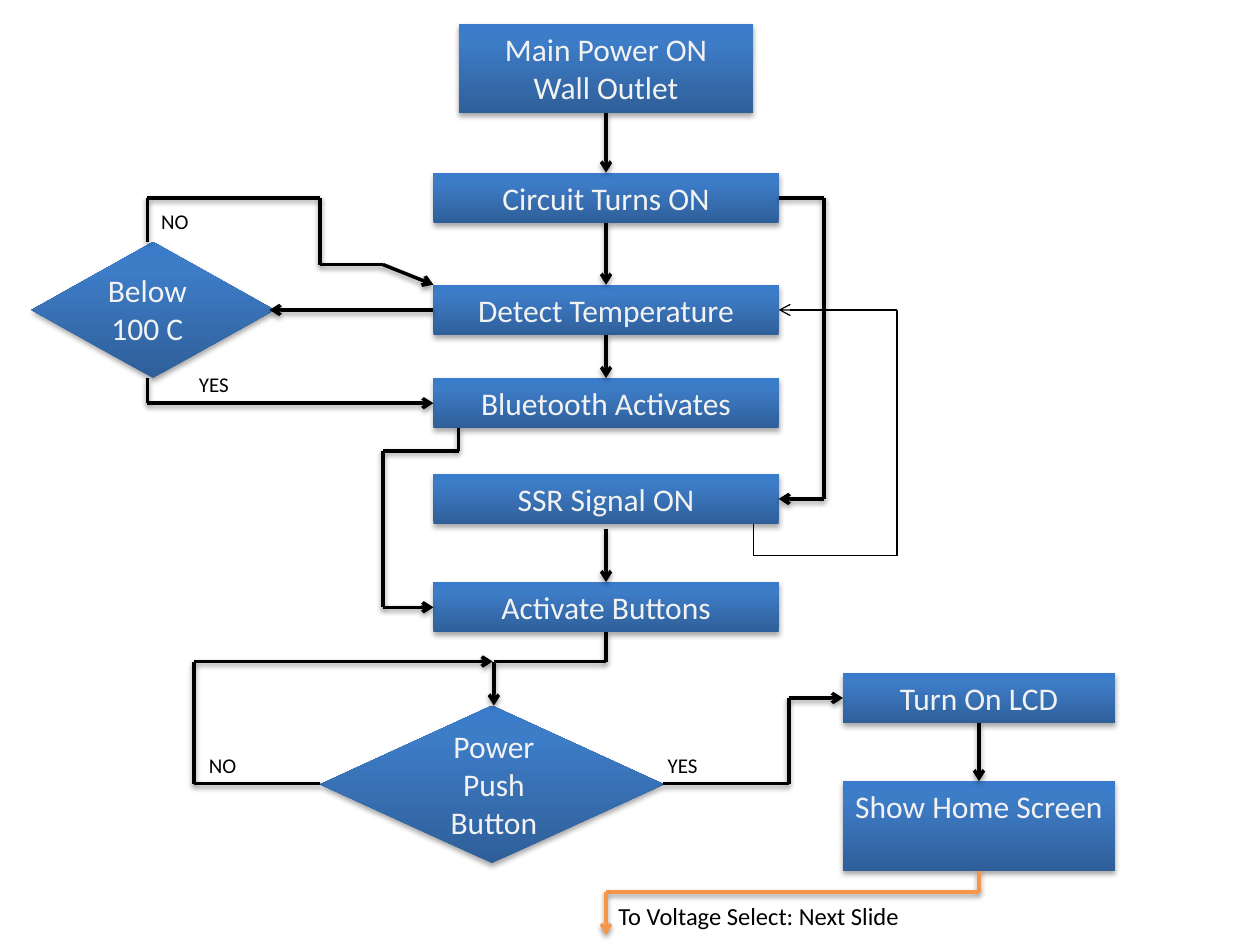
from copy import deepcopy
from itertools import pairwise

from lxml.etree import SubElement
from pptx import Presentation
from pptx.dml.color import RGBColor
from pptx.enum.shapes import MSO_CONNECTOR as Link, MSO_SHAPE as Form
from pptx.enum.text import MSO_ANCHOR as Anchor, PP_ALIGN as Align
from pptx.oxml.ns import qn
from pptx.util import Inches, Pt

BLACK = RGBColor(0, 0, 0)
PALE = RGBColor(0xF2, 0xF2, 0xF2)
ORANGE = RGBColor(0xF7, 0x96, 0x46)
BLUES = [
    (0, RGBColor(0x2F, 0x5F, 0x99)),
    (0.8, RGBColor(0x3D, 0x7C, 0xC7)),
    (1, RGBColor(0x3A, 0x7C, 0xCB)),
]
TOP, LEFT, BOTTOM, RIGHT = range(4)
SIDES = {TOP: (0.5, 0), LEFT: (0, 0.5), BOTTOM: (0.5, 1), RIGHT: (1, 0.5)}
AXIS = 4.81


def apply(target, values):
    for name, value in values.items():
        setattr(target, name, value)


class FlowPage:
    font = "Calibri"
    frame_format = {"word_wrap": True, "vertical_anchor": Anchor.TOP}
    box_format = {"margin_left": Inches(0.05), "margin_right": Inches(0.05)}

    def __init__(self, deck):
        self.page = deck.slides.add_slide(deck.slide_layouts[6])

    def effects(self, item, opacity=0, distance=0):
        effects = SubElement(item._element.spPr, qn("a:effectLst"))
        if opacity:
            shadow = SubElement(
                effects, qn("a:outerShdw"), blurRad=str(Pt(3.1)),
                dist=str(Pt(distance)), dir="5400000", rotWithShape="0")
            color = SubElement(shadow, qn("a:srgbClr"), val=str(BLACK))
            SubElement(color, qn("a:alpha"), val=str(opacity * 1000))

    def set_text(self, shape, lines, size, color, align):
        frame = shape.text_frame
        apply(frame, self.frame_format)
        frame.text = "\n".join(lines)
        for para in frame.paragraphs:
            para.alignment = align
            for span in para.runs:
                apply(span.font, {"name": self.font, "size": Pt(size)})
                span.font.color.rgb = color

    def shape(self, form, place):
        shape = self.page.shapes.add_shape(form, *map(Inches, place))
        shape.fill.gradient()
        shape.fill.gradient_angle = 90
        stops = shape._element.spPr.find(".//" + qn("a:gsLst"))
        stops.append(deepcopy(stops[0]))
        for stop, (position, color) in zip(shape.fill.gradient_stops, BLUES):
            stop.position = position
            stop.color.rgb = color
        shape.line.fill.background()
        self.effects(shape, 35, 1.8)
        return shape

    def box(self, place, *lines):
        box = self.shape(Form.RECTANGLE, place)
        self.set_text(box, lines, 18, PALE, Align.CENTER)
        apply(box.text_frame, self.box_format)
        return box

    def decision(self, place, label, label_place):
        self.shape(Form.FLOWCHART_DECISION, place)
        self.label(label_place, label, 18, PALE, Align.CENTER)

    def label(self, place, text, size=12, color=BLACK, align=Align.LEFT):
        box = self.page.shapes.add_textbox(*map(Inches, place))
        self.set_text(box, [text], size, color, align)

    def point(self, stop):
        if isinstance(stop[0], (int, float)):
            return tuple(map(Inches, stop))
        box, side = stop
        across, down = SIDES[side]
        return (int(box.left + box.width * across),
                int(box.top + box.height * down))

    def route(self, *stops, color=BLACK, width=2, arrow=True):
        for start, end in pairwise(stops):
            line = self.page.shapes.add_connector(
                Link.STRAIGHT, *self.point(start), *self.point(end))
            for stop, join in ((start, line.begin_connect),
                               (end, line.end_connect)):
                if not isinstance(stop[0], (int, float)):
                    join(*stop)
            line.line.color.rgb = color
            line.line.width = Pt(width)
            if arrow and end is stops[-1]:
                SubElement(line.get_or_add_ln(), qn("a:tailEnd"), type="arrow")
            self.effects(line, 38 if width > 1 else 0, 1.6)


def main():
    deck = Presentation()
    apply(deck, {"slide_width": Inches(10), "slide_height": Inches(7.5)})
    flow = FlowPage(deck)

    power = flow.box((3.64, 0.19, 2.34, 0.71), "Main Power ON", "Wall Outlet")
    steps = [(1.37, "Circuit Turns ON"), (2.26, "Detect Temperature"),
             (3, "Bluetooth Activates"), (3.76, "SSR Signal ON"),
             (4.62, "Activate Buttons")]
    circuit, detect, bluetooth, signal, buttons = [
        flow.box((3.44, top, 2.74, 0.4), text) for top, text in steps]
    screen = flow.box((6.69, 5.34, 2.16, 0.4), "Turn On LCD")
    home = flow.box((6.69, 6.2, 2.16, 0.71), "Show Home Screen")
    flow.decision((0.25, 1.92, 1.93, 1.08), "Below 100 C", (0.67, 2.1, 1, 0.71))
    flow.decision((2.54, 5.6, 2.73, 1.25), "Power Push Button",
                  (3.42, 5.72, 1, 1.01))

    for upper, lower in [*pairwise([power, circuit, detect, bluetooth]),
                         (screen, home)]:
        flow.route((upper, BOTTOM), (lower, TOP))
    flow.route((AXIS, 4.2), (buttons, TOP))
    flow.route((3.64, 3.4), (3.64, 3.58), (3.04, 3.58), (3.04, 4.82),
               (buttons, LEFT))
    flow.route((detect, LEFT), (2.14, 2.46))
    flow.route((1.17, 3), (1.17, 3.2), (bluetooth, LEFT))
    flow.route((1.17, 1.92), (1.17, 1.57), (2.54, 1.57), (2.54, 2.1),
               (3.04, 2.1), (3.44, 2.26))
    flow.route((circuit, RIGHT), (6.54, 1.57), (6.54, 3.96), (signal, RIGHT))
    flow.route((buttons, BOTTOM), (AXIS, 5.25), (3.92, 5.25), (3.92, 5.6))
    flow.route((2.54, 6.22), (1.54, 6.22), (1.54, 5.25), (3.91, 5.25))
    flow.route((5.26, 6.22), (6.26, 6.22), (6.26, 5.54), (screen, LEFT))
    flow.route((5.98, 4.16), (5.98, 4.41), (7.12, 4.41), (7.12, 2.46),
               (detect, RIGHT), width=0.75)
    flow.route((home, BOTTOM), (7.77, 7.08), (AXIS, 7.08), (AXIS, 7.42),
               color=ORANGE)

    for left, top, text in [(1.18, 1.61, "NO"), (1.48, 2.9, "YES"),
                            (1.56, 5.92, "NO"), (5.2, 5.92, "YES")]:
        flow.label((left, top, 0.76, 0.3), text)
    flow.label((AXIS, 7.1, 3.17, 0.34), "To Voltage Select: Next Slide", 14)

    deck.save("out.pptx")


if __name__ == "__main__":
    main()
